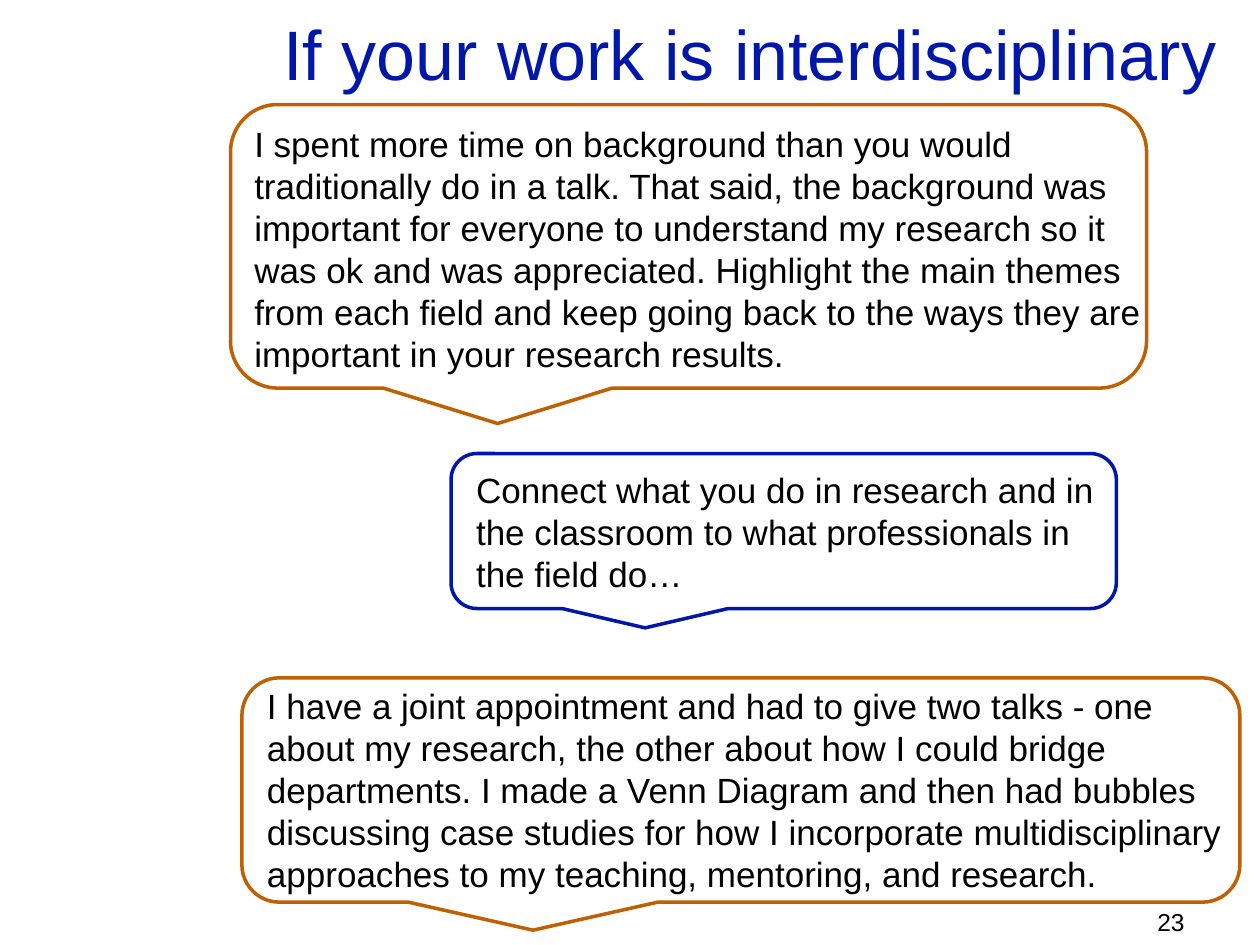
import pptx
import pptx.util
import pptx.dml.color
import pptx.enum.shapes
import pptx.enum.text

Inches = pptx.util.Inches
Pt = pptx.util.Pt
ALIGN = pptx.enum.text.PP_ALIGN
ANCHOR = pptx.enum.text.MSO_ANCHOR

BLUE, ORANGE, BLACK = "0017AA", "BE6003", "000000"

QUOTES = [
    ((1.83, 0.83, 7.27, 2.25), (1.92, 0.92, 7.27, 2.12), ORANGE,
     "I spent more time on background than you would traditionally do in a talk. "
     "That said, the background was important for everyone to understand my research "
     "so it was ok and was appreciated. Highlight the main themes from each field and "
     "keep going back to the ways they are important in your research results."),
    ((3.58, 3.6, 5.28, 1.23), (3.68, 3.67, 5.25, 1.11), BLUE,
     "Connect what you do in research and in the classroom to what professionals "
     "in the field do…"),
    ((1.92, 5.38, 7.92, 1.78), (2.02, 5.38, 7.81, 1.78), ORANGE,
     "I have a joint appointment and had to give two talks - one about my research, "
     "the other about how I could bridge departments. I made a Venn Diagram and then "
     "had bubbles discussing case studies for how I incorporate multidisciplinary "
     "approaches to my teaching, mentoring, and research."),
]


def color(value):
    return pptx.dml.color.RGBColor.from_string(value)


def set_all(target, values):
    for name, value in values.items():
        setattr(target, name, value)


def add_text(s, box, text, size, ink=BLACK, anchor=ANCHOR.TOP, **paragraph_format):
    tf = s.shapes.add_textbox(*map(Inches, box)).text_frame
    set_all(tf, {"word_wrap": True, "vertical_anchor": anchor})
    p = tf.paragraphs[0]
    set_all(p, paragraph_format)
    r = p.add_run()
    r.text = text
    set_all(r.font, {"name": "Arial", "size": Pt(size)})
    r.font.color.rgb = color(ink)


def add_quote(s, bubble_box, text_box, outline, text):
    add_text(s, text_box, text, 20, line_spacing=Pt(24))
    kind = pptx.enum.shapes.MSO_SHAPE.ROUNDED_RECTANGULAR_CALLOUT
    sp = s.shapes.add_shape(kind, *map(Inches, bubble_box))
    sp.shadow.inherit = False
    sp.fill.background()
    sp.line.color.rgb = color(outline)
    sp.line.width = Pt(2)


def main():
    prs = pptx.Presentation()
    set_all(prs, {"slide_width": Inches(10), "slide_height": Inches(7.5)})
    s = prs.slides.add_slide(prs.slide_layouts[6])
    add_text(s, (1.83, 0, 7.92, 0.83), "If your work is interdisciplinary", 40,
             BLUE, ANCHOR.MIDDLE, alignment=ALIGN.RIGHT)
    for quote in QUOTES:
        add_quote(s, *quote)
    add_text(s, (7.17, 7.15, 2.33, 0.52), "23", 14, alignment=ALIGN.RIGHT)
    prs.save("out.pptx")


if __name__ == "__main__":
    main()
